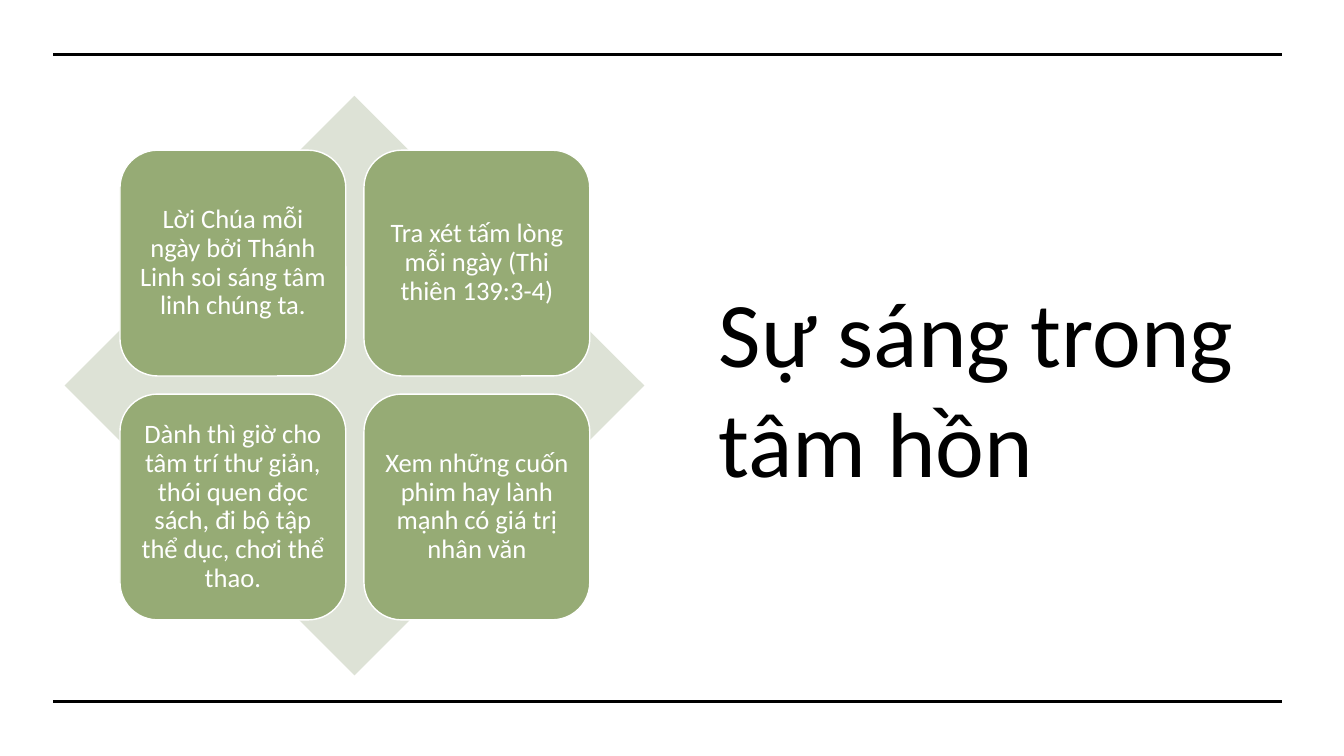
from pptx import Presentation
from pptx.dml.color import RGBColor
from pptx.enum.shapes import MSO_CONNECTOR as Connector, MSO_SHAPE as Preset
from pptx.enum.text import MSO_ANCHOR as Anchor, PP_ALIGN as Align
from pptx.oxml.ns import qn
from pptx.util import Emu, Pt
from lxml.etree import SubElement

EMU_PER_PX = 9144  # 100 px to the inch
COLORS = {"ink": "000000", "paper": "FFFFFF", "card": "96AB75", "diamond": "DDE2D6"}
FONT = "Calibri"

CARD_SIZE = 224
CARD_PITCH = 242
CARDS_LEFT, CARDS_TOP = 119, 149
HABITS = [
    "Lời Chúa mỗi ngày bởi Thánh Linh soi sáng tâm linh chúng ta.",
    "Tra xét tấm lòng mỗi ngày (Thi thiên 139:3-4)",
    "Dành thì giờ cho tâm trí thư giản, thói quen đọc sách, đi bộ tập thể dục, chơi thể thao.",
    "Xem những cuốn phim hay lành mạnh có giá trị nhân văn",
]


def px(length):
    return Emu(length * EMU_PER_PX)


def color(name):
    return RGBColor.from_string(COLORS[name])


def write(frame, text, size, ink, align):
    frame.word_wrap = True
    frame.vertical_anchor = Anchor.MIDDLE
    paragraph = frame.paragraphs[0]
    paragraph.text = text
    paragraph.alignment = align
    paragraph.font.name = FONT
    paragraph.font.size = Pt(size)
    paragraph.font.color.rgb = color(ink)
    return paragraph


def add_rule(slide, y):
    rule = slide.shapes.add_connector(Connector.STRAIGHT, px(53), px(y), px(1272), px(y))
    rule.line.color.rgb = color("ink")
    rule.line.width = Pt(2.25)
    SubElement(rule._element.spPr, qn("a:effectLst"))


def add_title(slide, text):
    title = slide.shapes.add_textbox(px(703), px(95), px(569), px(575))
    write(title.text_frame, text, 66, "ink", Align.LEFT)


def add_filled(shapes, preset, left, top, size, fill):
    """Add a square-bounded shape with a plain fill and no shadow."""
    shape = shapes.add_shape(preset, px(left), px(top), px(size), px(size))
    shape.shadow.inherit = False
    shape.fill.solid()
    shape.fill.fore_color.rgb = color(fill)
    return shape


def add_card(shapes, left, top, text):
    card = add_filled(shapes, Preset.ROUNDED_RECTANGLE, left, top, CARD_SIZE, "card")
    card.line.color.rgb = color("paper")
    card.line.width = Pt(1)
    frame = card.text_frame
    frame.margin_left = frame.margin_right = px(8)
    frame.margin_top = frame.margin_bottom = px(8)
    write(frame, text, 19, "paper", Align.CENTER).line_spacing = 0.9


def add_matrix(slide, texts):
    """Group a diamond with a two-by-two grid of cards over it."""
    shapes = slide.shapes.add_group_shape().shapes
    diamond = add_filled(shapes, Preset.DIAMOND, 64, 95, 575, "diamond")
    diamond.line.fill.background()
    for index, text in enumerate(texts):
        row, column = divmod(index, 2)
        add_card(shapes, CARDS_LEFT + column * CARD_PITCH, CARDS_TOP + row * CARD_PITCH, text)


def main():
    deck = Presentation()
    deck.slide_width, deck.slide_height = px(1333), px(750)
    slide = deck.slides.add_slide(deck.slide_layouts[6])
    add_title(slide, "Sự sáng trong tâm hồn")
    for y in (54, 696):
        add_rule(slide, y)
    add_matrix(slide, HABITS)
    deck.save("out.pptx")


if __name__ == "__main__":
    main()
